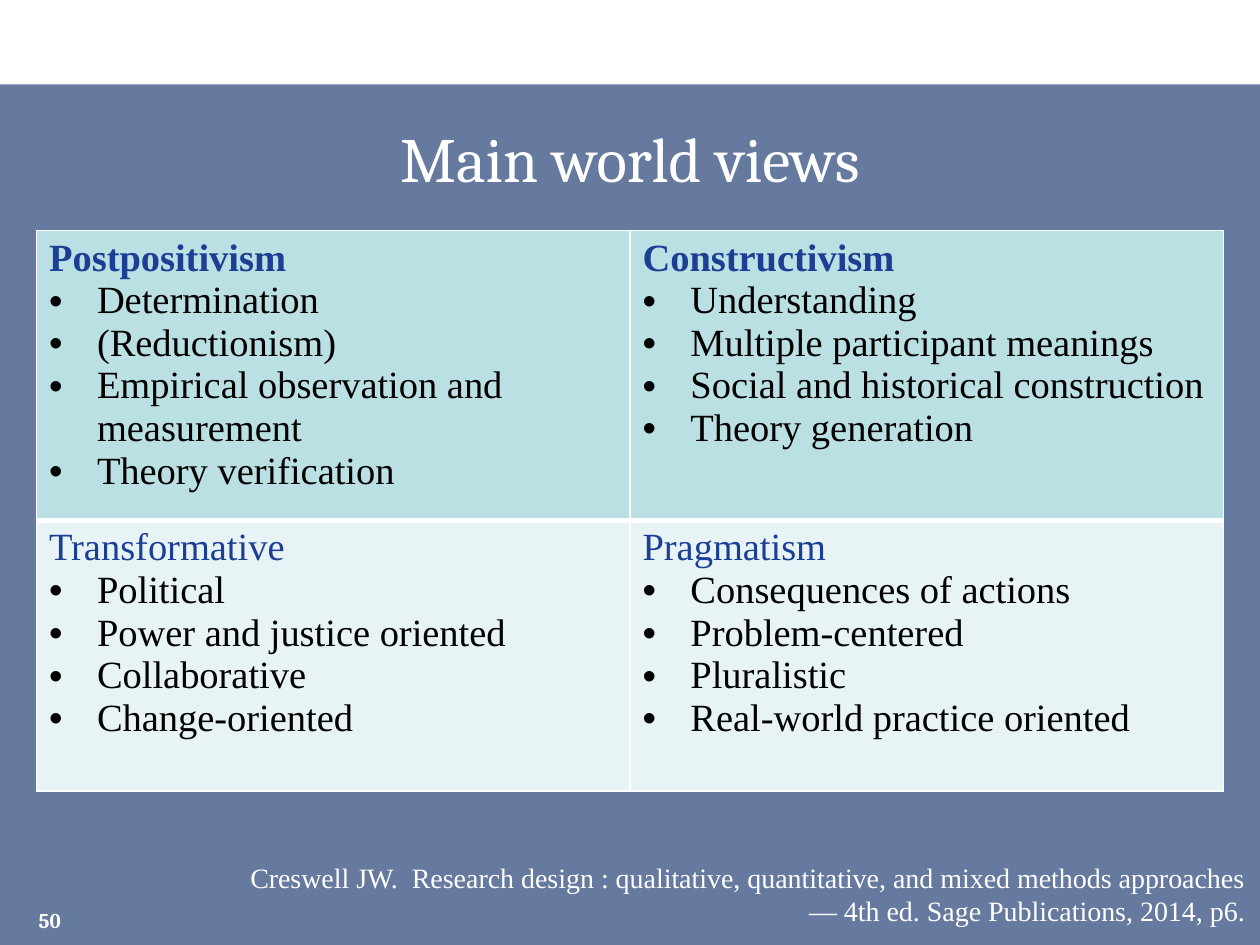
from dataclasses import dataclass

from lxml import etree
from pptx import Presentation
from pptx.dml.color import RGBColor
from pptx.enum.shapes import MSO_SHAPE
from pptx.enum.text import MSO_ANCHOR, PP_ALIGN
from pptx.oxml.ns import qn
from pptx.util import Inches, Pt

RECTANGLE = MSO_SHAPE.RECTANGLE
TOP, MIDDLE = MSO_ANCHOR.TOP, MSO_ANCHOR.MIDDLE
CENTER, RIGHT = PP_ALIGN.CENTER, PP_ALIGN.RIGHT


@dataclass(frozen=True)
class Theme:
    """Colours, fonts and type sizes of the slide."""
    white: str = "FFFFFF"
    black: str = "000000"
    panel: str = "002060"
    heading: str = "1C3F96"
    row_fills: tuple = ("BBE0E3", "E7F3F4")
    title_font: str = "Cambria"
    body_font: str = "Times New Roman"
    title_size: int = 36
    table_size: int = 22
    citation_size: int = 16
    number_size: int = 12


THEME = Theme()
WORLD_VIEWS = [
    [
        ("Postpositivism", ["Determination", "(Reductionism)",
                            "Empirical observation and measurement", "Theory verification"]),
        ("Constructivism", ["Understanding", "Multiple participant meanings",
                            "Social and historical construction", "Theory generation"]),
    ],
    [
        ("Transformative", ["Political", "Power and justice oriented",
                            "Collaborative", "Change-oriented"]),
        ("Pragmatism", ["Consequences of actions", "Problem-centered",
                        "Pluralistic", "Real-world practice oriented"]),
    ],
]
ROW_HEIGHTS = (2.13, 2.15)
CITATION = ("Creswell JW.  Research design : qualitative, quantitative, and mixed methods "
            "approaches— 4th ed. Sage Publications, 2014, p6.")


def style_font(paragraph, name, size, color, bold=False):
    """Set the font of a whole paragraph."""
    font = paragraph.font
    font.name, font.size, font.bold = name, Pt(size), bold
    font.color.rgb = RGBColor.from_string(color)


def add_panel(slide):
    """Add the translucent panel behind the content."""
    shape = slide.shapes.add_shape(RECTANGLE, 0, Inches(0.67), Inches(10), Inches(6.83))
    shape.shadow.inherit = False
    shape.fill.solid()
    shape.fill.fore_color.rgb = RGBColor.from_string(THEME.panel)
    shape.line.fill.background()
    color = shape.fill._xPr.find(qn("a:solidFill"))[0]
    etree.SubElement(color, qn("a:alpha"), val="60000")


def add_text(slide, box, text, font, size, alignment, anchor=TOP, bold=False):
    """Add a white one-paragraph text box."""
    shape = slide.shapes.add_textbox(*map(Inches, box))
    frame = shape.text_frame
    frame.word_wrap = True
    frame.vertical_anchor = anchor
    paragraph = frame.paragraphs[0]
    paragraph.text = text
    paragraph.alignment = alignment
    style_font(paragraph, font, size, THEME.white, bold)


def set_borders(cell, top, bottom):
    """Draw white cell borders, one point wide at the sides."""
    properties = cell._tc.get_or_add_tcPr()
    widths = {"lnL": 1, "lnR": 1, "lnT": top, "lnB": bottom}
    for index, (tag, width) in enumerate(widths.items()):
        line = etree.Element(qn(f"a:{tag}"), w=str(Pt(width)))
        fill = etree.SubElement(line, qn("a:solidFill"))
        etree.SubElement(fill, qn("a:srgbClr"), val=THEME.white)
        properties.insert(index, line)


def add_bullet(paragraph):
    """Give a paragraph a round bullet with a hanging indent."""
    properties = paragraph._p.get_or_add_pPr()
    indent = Inches(0.38)
    properties.set("marL", str(indent))
    properties.set("indent", str(-indent))
    etree.SubElement(properties, qn("a:buFont"), typeface="Arial")
    etree.SubElement(properties, qn("a:buChar"), char="•")


def fill_cell(cell, heading, points, fill, bold):
    """Write a heading and its bulleted points into a cell."""
    cell.fill.solid()
    cell.fill.fore_color.rgb = RGBColor.from_string(fill)
    frame = cell.text_frame
    frame.paragraphs[0].text = heading
    style_font(frame.paragraphs[0], THEME.body_font, THEME.table_size, THEME.heading, bold)
    for point in points:
        paragraph = frame.add_paragraph()
        paragraph.text = point
        add_bullet(paragraph)
        style_font(paragraph, THEME.body_font, THEME.table_size, THEME.black)


def add_world_views(slide):
    """Add the two-by-two table of world views."""
    frame = slide.shapes.add_table(2, 2, Inches(0.29), Inches(1.83),
                                   Inches(9.42), Inches(sum(ROW_HEIGHTS)))
    table = frame.table
    table.first_row = table.horz_banding = False
    for row, views in enumerate(WORLD_VIEWS):
        table.rows[row].height = Inches(ROW_HEIGHTS[row])
        top, bottom = (1, 3) if row == 0 else (3, 1)
        for column, (heading, points) in enumerate(views):
            cell = table.cell(row, column)
            fill_cell(cell, heading, points, THEME.row_fills[row], bold=row == 0)
            set_borders(cell, top, bottom)


def main():
    """Build and save the slide."""
    presentation = Presentation()
    presentation.slide_width, presentation.slide_height = Inches(10), Inches(7.5)
    slide = presentation.slides.add_slide(presentation.slide_layouts[6])
    add_panel(slide)
    add_text(slide, (0.25, 0.83, 9.5, 0.83), "Main world views",
             THEME.title_font, THEME.title_size, CENTER, MIDDLE)
    add_world_views(slide)
    add_text(slide, (1.73, 6.78, 8.25, 0.64), CITATION,
             THEME.body_font, THEME.citation_size, RIGHT)
    add_text(slide, (0, 7.1, 0.58, 0.4), "50",
             THEME.title_font, THEME.number_size, RIGHT, MIDDLE, bold=True)
    presentation.save("out.pptx")


if __name__ == "__main__":
    main()
